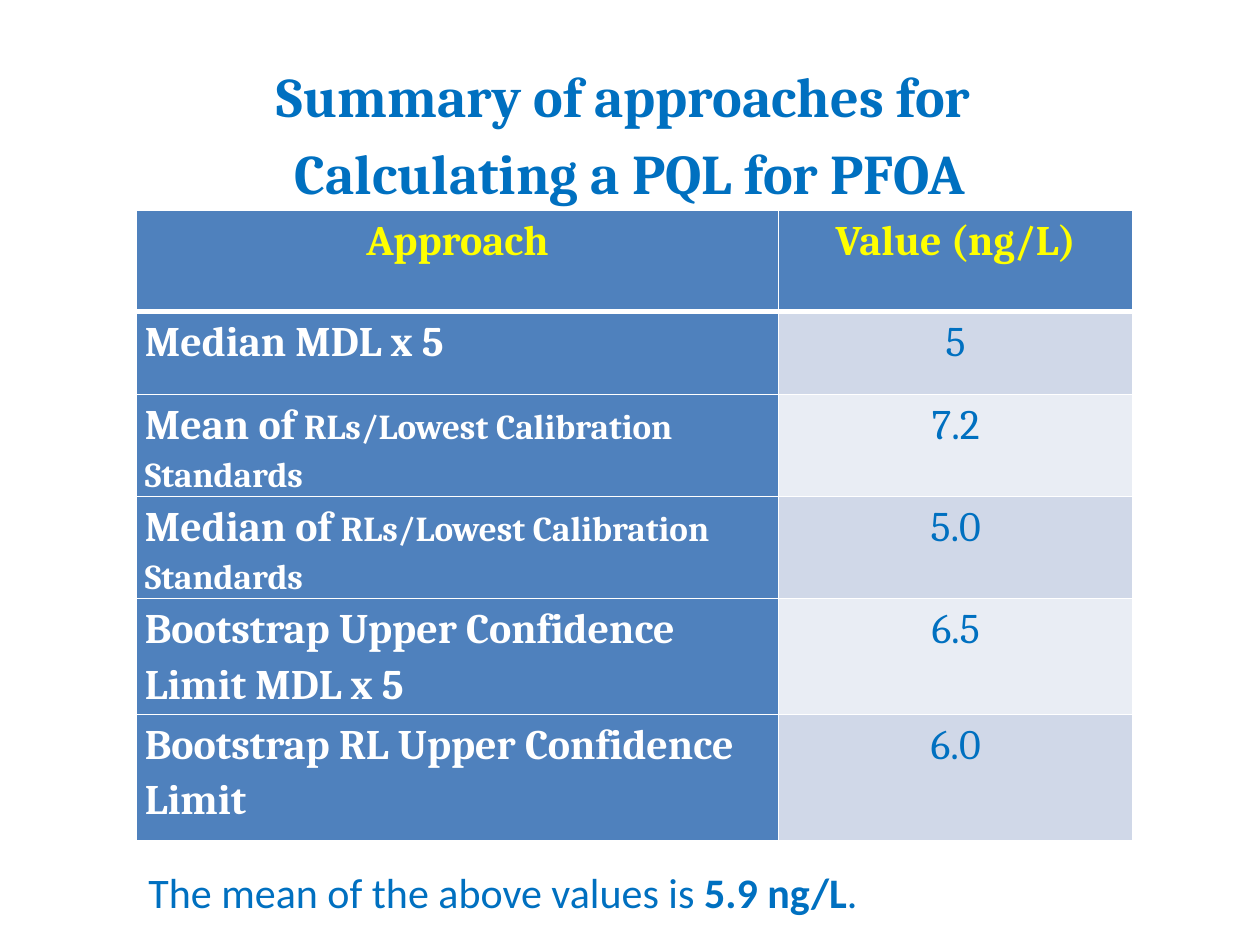
from lxml import etree
from pptx import Presentation
from pptx import util as u
from pptx.dml.color import RGBColor
from pptx.enum import text
from pptx.oxml import ns

COLORS = {
    "blue": "0070C0",
    "yellow": "FFFF00",
    "white": "FFFFFF",
    "label": "4F81BD",
    "odd": "D0D8E8",
    "even": "E9EDF4",
}
CENTER, LEFT = text.PP_ALIGN.CENTER, text.PP_ALIGN.LEFT


def add_span(para, words, size, color, bold=False, font="Cambria"):
    span = para.add_run()
    span.text = words
    span.font.name = font
    span.font.size = u.Pt(size)
    span.font.bold = bold
    span.font.color.rgb = RGBColor.from_string(COLORS[color])


def add_border(cell, side, points):
    line = etree.SubElement(cell._tc.get_or_add_tcPr(), ns.qn(f"a:{side}"), w=str(u.Pt(points)))
    fill = etree.SubElement(line, ns.qn("a:solidFill"))
    etree.SubElement(fill, ns.qn("a:srgbClr"), val=COLORS["white"])


deck = Presentation()
deck.slide_width, deck.slide_height = u.Inches(10), u.Inches(7.5)
page = deck.slides.add_slide(deck.slide_layouts[5])

# Title
title = page.shapes.title
title.left, title.top = u.Inches(1), u.Inches(0.3)
title.width, title.height = u.Inches(8), u.Inches(1.37)
frame = title.text_frame
frame.auto_size = text.MSO_AUTO_SIZE.NONE
frame.vertical_anchor = text.MSO_ANCHOR.MIDDLE
frame.margin_top, frame.margin_bottom = u.Inches(0.05), u.Inches(0)
para = frame.paragraphs[0]
para.alignment, para.line_spacing = CENTER, 1.15
add_span(para, "Summary of approaches for ", 32, "blue", True)
para.add_line_break()
add_span(para, "Calculating a PQL for PFOA", 32, "blue", True)
frame.margin_bottom = u.Inches(0.06)
frame.margin_top = u.Inches(0.13)

# Table: main label, smaller label, value
rows = [
    ("Approach", "", "Value (ng/L)"),
    ("Median MDL x 5", "", "5"),
    ("Mean of ", "RLs/Lowest Calibration Standards", "7.2"),
    ("Median of ", "RLs/Lowest Calibration Standards", "5.0"),
    ("Bootstrap Upper Confidence Limit MDL x 5", "", "6.5"),
    ("Bootstrap RL Upper Confidence Limit", "", "6.0"),
]
widths = [5.1, 2.81]
heights = [0.8, 0.66, 0.81, 0.81, 0.92, 1]
table = page.shapes.add_table(
    len(rows), len(widths), u.Inches(1.08), u.Inches(1.67),
    u.Inches(sum(widths)), u.Inches(sum(heights)),
).table
for column, width in zip(table.columns, widths):
    column.width = u.Inches(width)

for r, (label, detail, value) in enumerate(rows):
    table.rows[r].height = u.Inches(heights[r])
    header = r == 0
    for c, words in enumerate((label, value)):
        cell = table.cell(r, c)
        is_value = c == 1 and not header
        cell.margin_left = cell.margin_right = u.Inches(0.07)
        cell.margin_top = cell.margin_bottom = 0

        para = cell.text_frame.paragraphs[0]
        para.alignment = CENTER if header or is_value else LEFT
        para.line_spacing = 1.15
        color = "yellow" if header else "blue" if is_value else "white"
        add_span(para, words, 24, color, not is_value)
        if detail and not is_value:
            add_span(para, detail, 20, color, True)

        # Borders come before the fill in the cell properties
        for side in ("lnL", "lnR", "lnT", "lnB"):
            thick = (header and side == "lnB") or (r == 1 and side == "lnT")
            add_border(cell, side, 3 if thick else 1)
        band = "odd" if r % 2 else "even"
        cell.fill.solid()
        cell.fill.fore_color.rgb = RGBColor.from_string(COLORS[band if is_value else "label"])

# Conclusion
box = page.shapes.add_textbox(u.Inches(1.08), u.Inches(6.83), u.Inches(7.25), u.Inches(0.5))
box.text_frame.word_wrap = True
box.text_frame.auto_size = text.MSO_AUTO_SIZE.SHAPE_TO_FIT_TEXT
para = box.text_frame.paragraphs[0]
for words, bold in (("The mean of the above values is ", False), ("5.9 ng/L", True), (".", False)):
    add_span(para, words, 24, "blue", bold, "Calibri")

deck.save("out.pptx")
